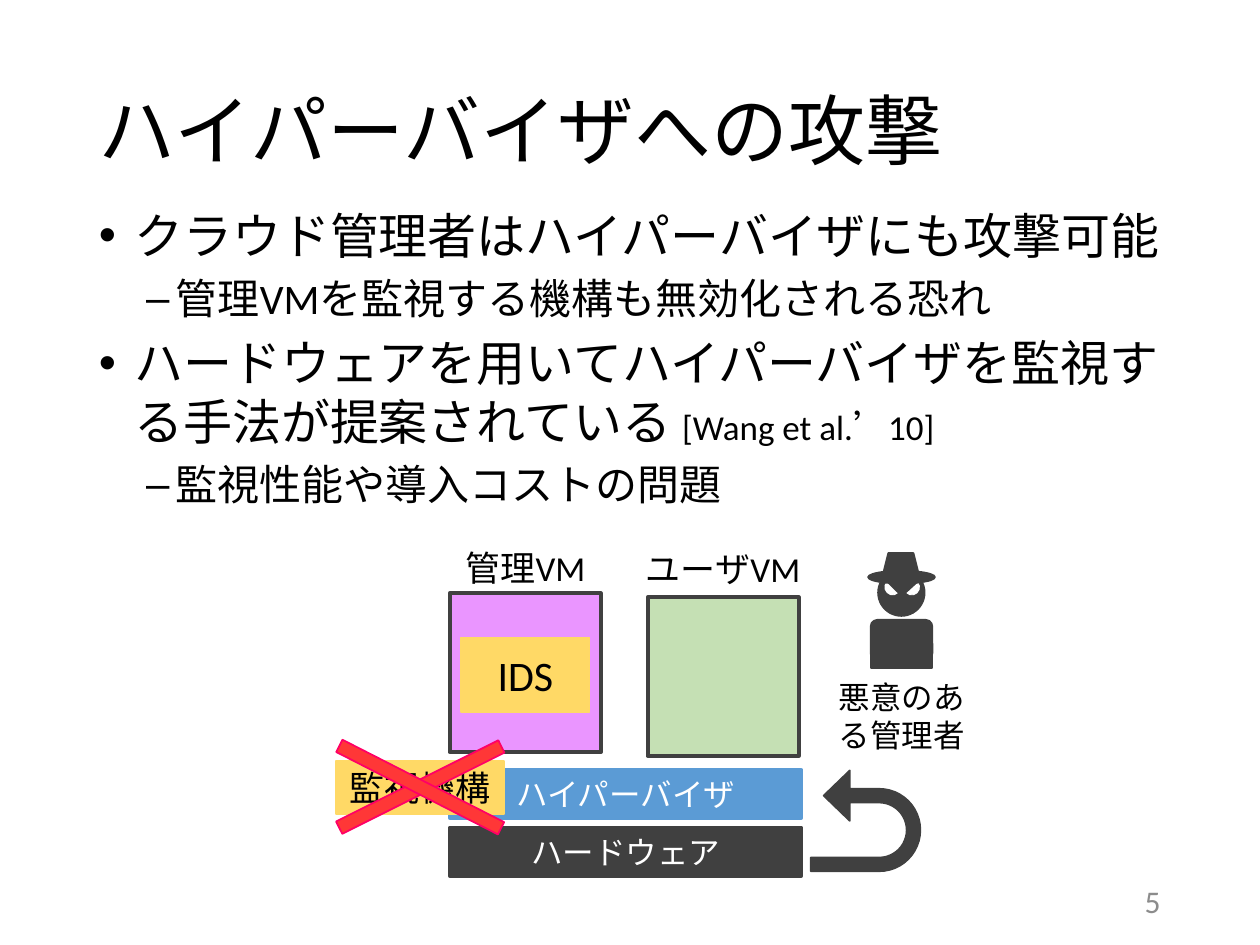
from dataclasses import dataclass
from typing import Any, Optional

from lxml.etree import SubElement
from pptx import Presentation
from pptx.dml.color import RGBColor
from pptx.enum.shapes import MSO_SHAPE
from pptx.enum.text import MSO_ANCHOR, PP_ALIGN
from pptx.oxml.ns import qn
from pptx.util import Pt

BLACK = RGBColor(0x00, 0x00, 0x00)
WHITE = RGBColor(0xFF, 0xFF, 0xFF)
GRAY = RGBColor(0x8C, 0x8C, 0x8C)
DARK = RGBColor(0x40, 0x40, 0x40)
BLUE = RGBColor(0x5B, 0x9B, 0xD5)
PURPLE = RGBColor(0xEA, 0x95, 0xFF)
GREEN = RGBColor(0xC5, 0xE0, 0xB4)
YELLOW = RGBColor(0xFF, 0xD9, 0x66)
RED = RGBColor(0xFF, 0x37, 0x37)
PINK = RGBColor(0xFF, 0x00, 0x66)
FONT = "Calibri"


@dataclass(frozen=True)
class Box:
    left: float
    top: float
    width: float
    height: float


@dataclass(frozen=True)
class Part:
    box: Box
    fill: RGBColor
    outline: RGBColor
    weight: float = 1
    preset: MSO_SHAPE = MSO_SHAPE.RECTANGLE
    text: str = ""
    size: float = 18
    color: RGBColor = BLACK
    rotation: float = 0
    flip: str = ""
    adjustments: tuple[float, ...] = ()


@dataclass(frozen=True)
class Label:
    box: Box
    text: str
    size: float
    align: PP_ALIGN = PP_ALIGN.CENTER
    anchor: MSO_ANCHOR = MSO_ANCHOR.TOP
    color: RGBColor = BLACK


@dataclass(frozen=True)
class Level:
    size: float
    margin: float
    hanging: float
    bullet: str


@dataclass(frozen=True)
class Point:
    level: int
    text: str
    citation: str = ""


LEVELS = (Level(28, 20.25, 20.25, "•"), Level(24, 43.9, 16.9, "–"))
POINTS = (
    Point(0, "クラウド管理者はハイパーバイザにも攻撃可能"),
    Point(1, "管理VMを監視する機構も無効化される恐れ"),
    Point(0, "ハードウェアを用いてハイパーバイザを監視する手法が提案されている ",
          "[Wang et al.’10]"),
    Point(1, "監視性能や導入コストの問題"),
)


def apply_format(target: Any, values: dict[str, Any]) -> None:
    for attribute, value in values.items():
        setattr(target, attribute, value)


def add_run(paragraph: Any, text: str, size: float, color: RGBColor) -> None:
    run = paragraph.add_run()
    run.text = text
    apply_format(run.font, {"name": FONT, "size": Pt(size)})
    run.font.color.rgb = color


def place(box: Box) -> tuple[Pt, Pt, Pt, Pt]:
    return Pt(box.left), Pt(box.top), Pt(box.width), Pt(box.height)


def draw_part(slide: Any, part: Part) -> None:
    shape = slide.shapes.add_shape(part.preset, *place(part.box))
    shape.shadow.inherit = False
    shape.rotation = part.rotation
    shape.fill.solid()
    shape.fill.fore_color.rgb = part.fill
    shape.line.color.rgb = part.outline
    shape.line.width = Pt(part.weight)
    for index, value in enumerate(part.adjustments):
        shape.adjustments[index] = value
    if part.flip:
        shape._element.spPr.find(qn("a:xfrm")).set(part.flip, "1")
    if part.text:
        paragraph = shape.text_frame.paragraphs[0]
        paragraph.alignment = PP_ALIGN.CENTER
        add_run(paragraph, part.text, part.size, part.color)


def draw_label(slide: Any, label: Label) -> None:
    frame = slide.shapes.add_textbox(*place(label.box)).text_frame
    apply_format(frame, {"word_wrap": True, "vertical_anchor": label.anchor})
    paragraph = frame.paragraphs[0]
    paragraph.alignment = label.align
    add_run(paragraph, label.text, label.size, label.color)


def draw_points(slide: Any, box: Box, points: tuple[Point, ...]) -> None:
    frame = slide.shapes.add_textbox(*place(box)).text_frame
    apply_format(frame, {"word_wrap": True, "margin_right": Pt(0)})
    for index, point in enumerate(points):
        level = LEVELS[point.level]
        paragraph = frame.add_paragraph() if index else frame.paragraphs[0]
        apply_format(paragraph, {"level": point.level,
                                 "space_before": Pt(level.size * 0.2)})
        properties = paragraph._p.get_or_add_pPr()
        properties.set("marL", str(Pt(level.margin)))
        properties.set("indent", str(-Pt(level.hanging)))
        SubElement(properties, qn("a:buFont")).set("typeface", "Arial")
        SubElement(properties, qn("a:buChar")).set("char", level.bullet)
        add_run(paragraph, point.text, level.size, BLACK)
        if point.citation:
            add_run(paragraph, point.citation, 20, BLACK)


def dark(box: Box, preset: MSO_SHAPE, **options: Any) -> Part:
    return Part(box, DARK, DARK, preset=preset, **options)


def layer(top: float, text: str, color: RGBColor) -> Part:
    return Part(Box(257, top, 201, 27.4), color, color, 2.25,
                text=text, color=WHITE)


def machine(left: float, top: float, color: RGBColor) -> Part:
    return Part(Box(left, top, 86.4, 90.7), color, DARK, 2.25)


def eye(left: float, rotation: float) -> Part:
    return Part(Box(left, 331.9, 8.6, 7.9), WHITE, WHITE, 0.5, MSO_SHAPE.ARC,
                rotation=rotation, flip="flipH", adjustments=(108.303, 0))


def cross_bar(rotation: float) -> Part:
    return Part(Box(236.2, 397.9, 7.9, 103.7), RED, PINK, rotation=rotation)


ADMINISTRATOR = (
    dark(Box(501.8, 325.4, 26.6, 26.6), MSO_SHAPE.OVAL),
    dark(Box(497.5, 354.2, 35.3, 23), MSO_SHAPE.ROUNDED_RECTANGLE),
    dark(Box(497.5, 369.4, 35.3, 12.2), MSO_SHAPE.RECTANGLE),
    eye(517, 137.9),
    eye(505.4, 225),
    dark(Box(496.1, 326.2, 38.2, 7.2), MSO_SHAPE.OVAL),
    dark(Box(504, 316.1, 21.6, 14.4), MSO_SHAPE.TRAPEZOID),
)
PARTS = (
    layer(439.9, "ハイパーバイザ", BLUE),
    machine(257, 339.1, PURPLE),
    machine(370.1, 341.3, GREEN),
    Part(Box(263.5, 364.3, 73.4, 42.5), YELLOW, YELLOW, text="IDS", size=24),
    *ADMINISTRATOR,
    layer(473, "ハードウェア", DARK),
    Part(Box(192.2, 434.9, 95.8, 30.2), YELLOW, YELLOW, text="監視機構", size=20),
    dark(Box(465.8, 437.8, 57.6, 62.6), MSO_SHAPE.U_TURN_ARROW, rotation=270,
         flip="flipV", adjustments=(0.136, 0.25, 0.259, 0.438, 0.883)),
    cross_bar(63.4),
    cross_bar(297),
)
LABELS = (
    Label(Box(49.5, 21.6, 621, 104.4), "ハイパーバイザへの攻撃", 44,
          PP_ALIGN.LEFT, MSO_ANCHOR.MIDDLE),
    Label(Box(476.6, 500.4, 193.7, 28.8), "5", 18,
          PP_ALIGN.RIGHT, MSO_ANCHOR.MIDDLE, GRAY),
    Label(Box(240.5, 308.9, 119.5, 31.7), "管理VM", 20),
    Label(Box(353.5, 309.6, 119.5, 31.7), "ユーザVM", 20),
    Label(Box(463.7, 383.8, 103, 51.1), "悪意のある管理者", 18),
)


def main() -> None:
    presentation = Presentation()
    apply_format(presentation, {"slide_width": Pt(720), "slide_height": Pt(540)})
    slide = presentation.slides.add_slide(presentation.slide_layouts[6])
    draw_points(slide, Box(49.5, 113.8, 621, 386.6), POINTS)
    for part in PARTS:
        draw_part(slide, part)
    for label in LABELS:
        draw_label(slide, label)
    presentation.save("out.pptx")


if __name__ == "__main__":
    main()
